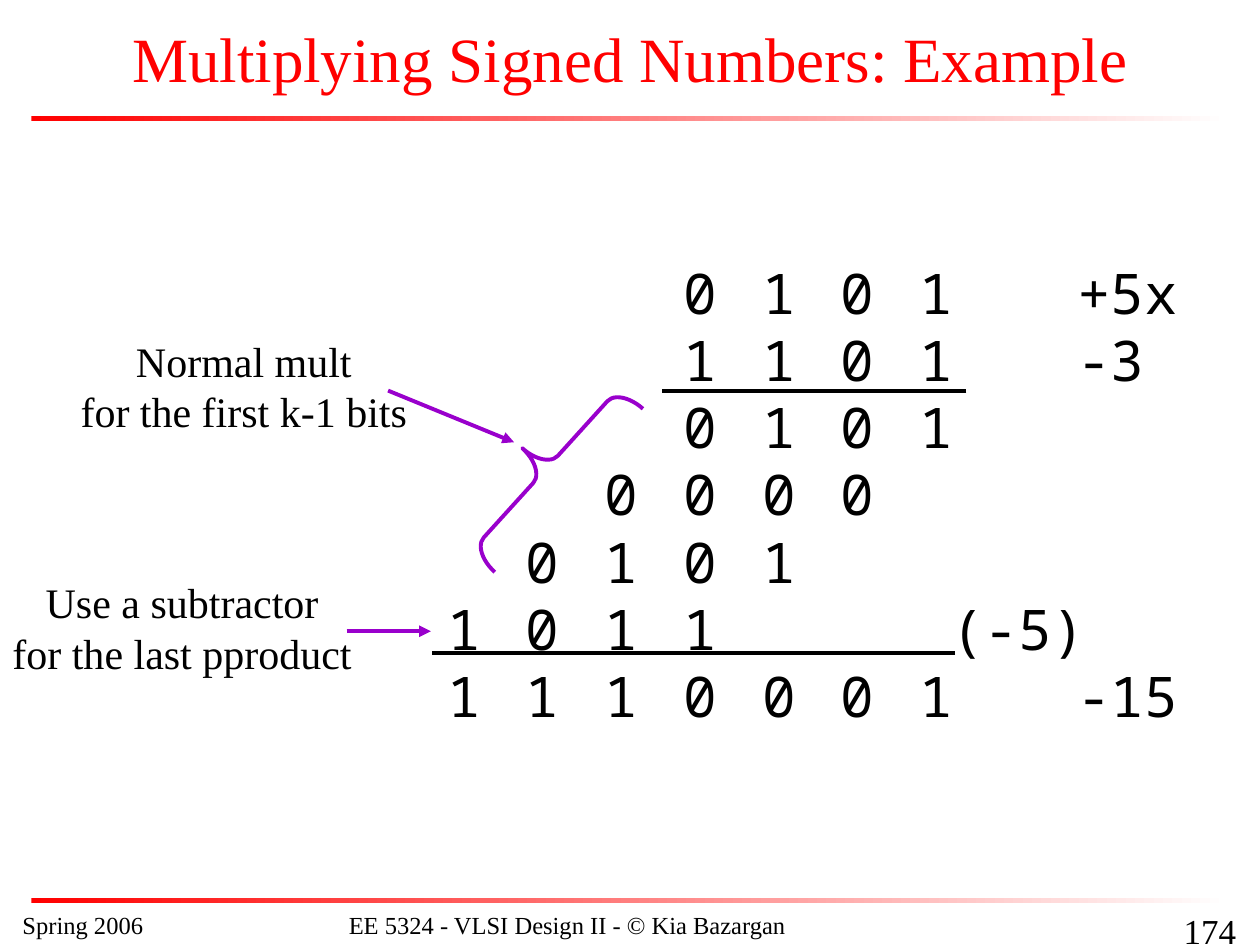
from lxml.etree import SubElement
from pptx import Presentation
from pptx.dml.color import RGBColor
from pptx.enum.shapes import MSO_CONNECTOR as Conn, MSO_SHAPE as Shape
from pptx.enum.text import MSO_ANCHOR as Anchor, PP_ALIGN as Align
from pptx.oxml.ns import qn
from pptx.util import Inches, Pt

SERIF, MONO = "Times New Roman", "Noto Sans Mono"
BLACK, RED, WHITE, PURPLE = "000000", "FF0000", "FFFFFF", "9900CC"
STEP = 0.625  # width of one digit column
COLS = [STEP * i for i in range(1, 9)]
ROWS = [
    ("\t\t\t0\t1\t0\t1\t\t+5x", COLS),
    ("\t\t\t1\t1\t0\t1\t\t-3", COLS),
    ("\t\t\t0\t1\t0\t1", COLS),
    ("\t\t0\t0\t0\t0", COLS),
    ("\t0\t1\t0\t1", COLS),
    ("1\t0\t1\t1\t(-5)", COLS[:3] + [4]),
    ("1\t1\t1\t0\t0\t0\t1\t\t-15", COLS),
]


def color(code):
    return RGBColor.from_string(code)


def style(para, size, face=SERIF, code=BLACK, align=Align.LEFT):
    para.alignment = align
    font = para.font
    font.size, font.name = Pt(size), face
    font.color.rgb = color(code)


def add_box(slide, area, wrap=True):
    frame = slide.shapes.add_textbox(*map(Inches, area)).text_frame
    frame.word_wrap = wrap
    return frame


def add_text(slide, area, text, size, code=BLACK, align=Align.LEFT,
             wrap=True, anchor=Anchor.TOP):
    frame = add_box(slide, area, wrap)
    frame.vertical_anchor = anchor
    para = frame.paragraphs[0]
    para.text = text
    style(para, size, code=code, align=align)


def add_bar(slide, top):
    bar = slide.shapes.add_shape(
        Shape.RECTANGLE, Inches(0.25), Inches(top), Inches(9.5), Inches(0.04))
    bar.shadow.inherit = False
    bar.line.fill.background()
    bar.fill.gradient()
    bar.fill.gradient_angle = 0
    for stop, code in zip(bar.fill.gradient_stops, (RED, WHITE)):
        stop.color.rgb = color(code)


def add_line(slide, start, end, code=BLACK, arrow=False):
    line = slide.shapes.add_connector(
        Conn.STRAIGHT, *map(Inches, start + end))
    line.line.color.rgb = color(code)
    line.line.width = Pt(2.25)
    if arrow:
        SubElement(line.line._get_or_add_ln(), qn("a:tailEnd"), type="triangle")
    SubElement(line._element.spPr, qn("a:effectLst"))


def add_brace(slide, area, turn):
    brace = slide.shapes.add_shape(Shape.LEFT_BRACE, *map(Inches, area))
    brace.shadow.inherit = False
    brace.rotation = turn
    brace.adjustments[0] = 0.29
    brace.fill.background()
    brace.line.color.rgb = color(PURPLE)
    brace.line.width = Pt(2.25)


def set_tabs(para, stops):
    props = para._p.get_or_add_pPr()
    tabs = SubElement(props, qn("a:tabLst"))
    for stop in stops:
        SubElement(tabs, qn("a:tab"), pos=str(Inches(stop)), algn="l")
    # The schema puts the tab list before the default run properties.
    props.find(qn("a:defRPr")).addprevious(tabs)


def add_sum(slide, area):
    """Write the long multiplication, one paragraph per row."""
    frame = add_box(slide, area, wrap=False)
    for i, (text, stops) in enumerate(ROWS):
        para = frame.add_paragraph() if i else frame.paragraphs[0]
        para.text = text
        style(para, 32, MONO)
        para.line_spacing = Pt(38.4)
        set_tabs(para, stops)


def main():
    deck = Presentation()
    deck.slide_width, deck.slide_height = Inches(10), Inches(7.5)
    slide = deck.slides.add_slide(deck.slide_layouts[6])

    for top in (0.92, 7.13):
        add_bar(slide, top)
    add_text(slide, (0.08, 7.17, 2.08, 0.25), "Spring 2006", 14)
    add_text(slide, (2.67, 7.17, 4.67, 0.33),
             "EE 5324 - VLSI Design II - © Kia Bazargan", 14)
    add_text(slide, (7.83, 7.17, 2.08, 0.25), "174", 20, align=Align.RIGHT)
    add_text(slide, (0, 0.08, 10, 0.75), "Multiplying Signed Numbers: Example",
             36, RED, Align.CENTER, anchor=Anchor.MIDDLE)

    add_sum(slide, (3.45, 2, 6.11, 3.83))
    add_line(slide, (7.67, 3.1), (5.25, 3.1))
    add_line(slide, (7.58, 5.18), (3.43, 5.18))

    notes = [
        ((0.54, 2.61, 2.79, 0.9), "Normal mult\vfor the first k-1 bits"),
        ((0, 4.53, 2.89, 0.9), "Use a subtractor\vfor the last pproduct"),
    ]
    for area, text in notes:
        add_text(slide, area, text, 24, align=Align.CENTER, wrap=False)
    add_line(slide, (2.75, 5.01), (3.42, 5.01), PURPLE, arrow=True)
    add_line(slide, (3.08, 3.1), (4.08, 3.51), PURPLE, arrow=True)
    add_brace(slide, (4.08, 2.85, 0.5, 1.75), 42.2)

    deck.save("out.pptx")


if __name__ == "__main__":
    main()
